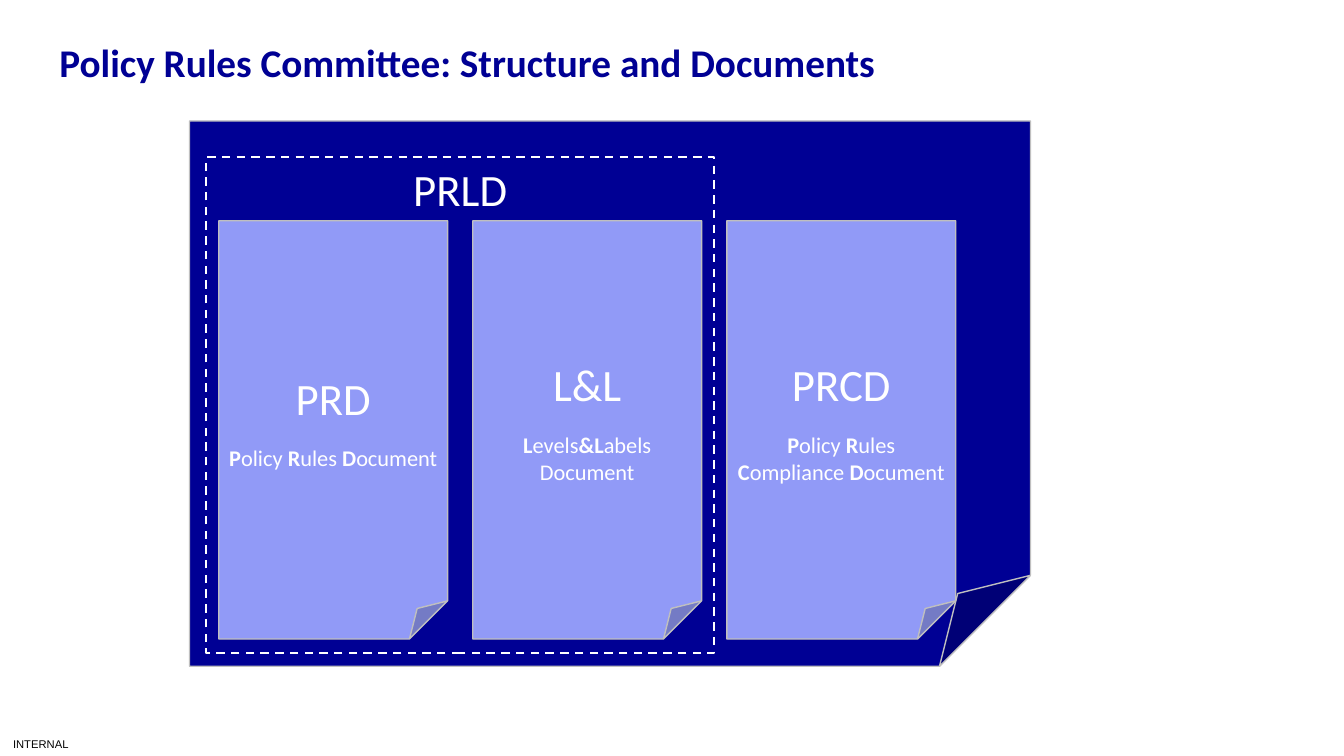
from dataclasses import dataclass

import pptx
import pptx.dml.color
import pptx.enum.dml
import pptx.enum.shapes
import pptx.enum.text
import pptx.presentation
import pptx.shapes.autoshape
import pptx.slide
import pptx.text.text
import pptx.util

RGBColor = pptx.dml.color.RGBColor
NAVY = RGBColor(0x00, 0x00, 0x94)
PERIWINKLE = RGBColor(0x91, 0x9A, 0xF7)
SILVER = RGBColor(0xBF, 0xBF, 0xBF)
WHITE = RGBColor(0xFF, 0xFF, 0xFF)
BLACK = RGBColor(0x00, 0x00, 0x00)

SLIDE_WIDTH = pptx.util.Inches(13.33)
SLIDE_HEIGHT = pptx.util.Inches(7.5)
CENTER = pptx.enum.text.PP_ALIGN.CENTER
MIDDLE = pptx.enum.text.MSO_ANCHOR.MIDDLE
FOLDED_CORNER = pptx.enum.shapes.MSO_SHAPE.FOLDED_CORNER
RECTANGLE = pptx.enum.shapes.MSO_SHAPE.RECTANGLE


@dataclass(frozen=True)
class Area:
    """A rectangle in percent of the slide's width and height."""

    left: float
    top: float
    width: float
    height: float

    def lengths(self) -> tuple[int, int, int, int]:
        return (
            round(SLIDE_WIDTH * self.left / 100),
            round(SLIDE_HEIGHT * self.top / 100),
            round(SLIDE_WIDTH * self.width / 100),
            round(SLIDE_HEIGHT * self.height / 100),
        )


@dataclass(frozen=True)
class Document:
    """A page; every second part of a description line is bold."""

    abbreviation: str
    description: tuple[tuple[str, ...], ...]


DOCUMENTS = (
    Document("PRD", (("", "P", "olicy ", "R", "ules ", "D", "ocument"),)),
    Document("L&L", (("", "L", "evels", "&L", "abels"), ("Document",))),
    Document("PRCD", (("", "P", "olicy ", "R", "ules ", "C", "ompliance ", "D", "ocument"),)),
)

TITLE = Area(3.9, 5.07, 85.52, 7.6)
CLASSIFICATION = Area(0, 96.8, 6.08, 3.2)
COMMITTEE_SHEET = Area(14.1, 16, 62.57, 72.13)
FIRST_PAGE = Area(16.28, 29.2, 17.03, 55.33)
PAGE_PITCH = 18.9
GUTTER = PAGE_PITCH - FIRST_PAGE.width
PRLD_FRAME = Area(FIRST_PAGE.left - GUTTER / 2, 20.8, 2 * PAGE_PITCH, 65.6)
PRLD_LABEL = Area(PRLD_FRAME.left, PRLD_FRAME.top, PRLD_FRAME.width, 8.53)


def add_text(
    paragraph: pptx.text.text._Paragraph,
    text: str,
    size: float,
    color: RGBColor = WHITE,
    bold: bool = False,
    font_name: str = "Calibri",
) -> None:
    run = paragraph.add_run()
    run.text = text
    run.font.name = font_name
    run.font.size = pptx.util.Pt(size)
    run.font.bold = bold
    run.font.color.rgb = color


def add_sheet(
    slide: pptx.slide.Slide, area: Area, fill: RGBColor
) -> pptx.shapes.autoshape.Shape:
    sheet = slide.shapes.add_shape(FOLDED_CORNER, *area.lengths())
    sheet.shadow.inherit = False
    sheet.fill.solid()
    sheet.fill.fore_color.rgb = fill
    sheet.line.color.rgb = SILVER
    sheet.line.width = pptx.util.Pt(1)
    return sheet


def add_document(slide: pptx.slide.Slide, document: Document, column: int) -> None:
    left = FIRST_PAGE.left + column * PAGE_PITCH
    area = Area(left, FIRST_PAGE.top, FIRST_PAGE.width, FIRST_PAGE.height)
    frame = add_sheet(slide, area, PERIWINKLE).text_frame
    frame.word_wrap = True
    frame.vertical_anchor = MIDDLE
    frame.margin_top = pptx.util.Inches(0.25)

    heading = frame.paragraphs[0]
    heading.alignment = CENTER
    add_text(heading, document.abbreviation, 32)

    description = frame.add_paragraph()
    description.alignment = CENTER
    description.space_before = pptx.util.Pt(14.6)
    for line_number, parts in enumerate(document.description):
        if line_number:
            description.add_line_break()
        for position, part in enumerate(parts):
            if part:
                add_text(description, part, 16, bold=position % 2 == 1)


def add_label(
    slide: pptx.slide.Slide, area: Area
) -> pptx.text.text.TextFrame:
    frame = slide.shapes.add_textbox(*area.lengths()).text_frame
    frame.word_wrap = True
    frame.paragraphs[0].alignment = CENTER
    return frame


def add_prld_frame(slide: pptx.slide.Slide) -> None:
    outline = slide.shapes.add_shape(RECTANGLE, *PRLD_FRAME.lengths())
    outline.shadow.inherit = False
    outline.fill.background()
    outline.line.color.rgb = WHITE
    outline.line.width = pptx.util.Pt(1.5)
    outline.line.dash_style = pptx.enum.dml.MSO_LINE.DASH


def fill_title(slide: pptx.slide.Slide) -> None:
    title = slide.shapes.title
    title.left, title.top, title.width, title.height = TITLE.lengths()
    frame = title.text_frame
    frame.auto_size = pptx.enum.text.MSO_AUTO_SIZE.NONE
    frame.word_wrap = True
    frame.vertical_anchor = MIDDLE
    frame.margin_left = pptx.util.Inches(0.07)
    frame.margin_top = 0
    frame.margin_right = pptx.util.Inches(0.1)
    frame.margin_bottom = pptx.util.Inches(0.05)
    paragraph = frame.paragraphs[0]
    paragraph.alignment = pptx.enum.text.PP_ALIGN.LEFT
    paragraph.line_spacing = 0.9
    add_text(paragraph, "Policy Rules Committee: Structure and Documents", 28, NAVY, True)


def add_classification(slide: pptx.slide.Slide) -> None:
    frame = add_label(slide, CLASSIFICATION)
    frame.vertical_anchor = MIDDLE
    frame.margin_left = frame.margin_right = 0
    frame.margin_top = frame.margin_bottom = 0
    add_text(frame.paragraphs[0], "INTERNAL", 8, BLACK, font_name="Arial")


def build_presentation() -> pptx.presentation.Presentation:
    presentation = pptx.Presentation()
    presentation.slide_width = SLIDE_WIDTH
    presentation.slide_height = SLIDE_HEIGHT
    title_only = presentation.slide_layouts.get_by_name("Title Only")
    slide = presentation.slides.add_slide(title_only)

    fill_title(slide)
    add_classification(slide)
    add_sheet(slide, COMMITTEE_SHEET, NAVY)
    add_text(add_label(slide, PRLD_LABEL).paragraphs[0], "PRLD", 32)
    for column, document in enumerate(DOCUMENTS):
        add_document(slide, document, column)
    add_prld_frame(slide)
    return presentation


if __name__ == "__main__":
    build_presentation().save("out.pptx")
